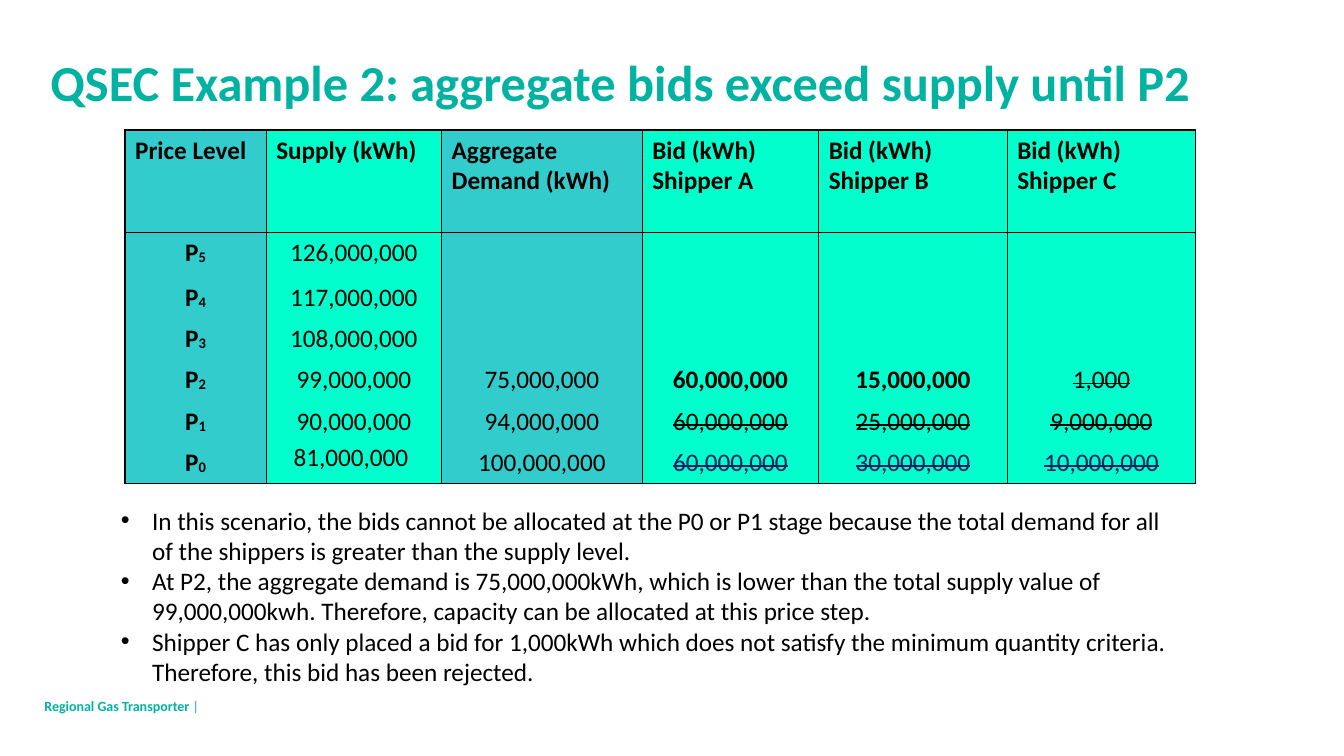
import pptx
import pptx.dml.color
import pptx.enum.text
import pptx.oxml.ns
import pptx.util
from lxml import etree

Inches, Pt = pptx.util.Inches, pptx.util.Pt
ALIGN, ANCHOR = pptx.enum.text.PP_ALIGN, pptx.enum.text.MSO_ANCHOR

TITLE = "QSEC Example 2: aggregate bids exceed supply until P2"
HEADERS = ["Price Level", "Supply (kWh)", "Aggregate Demand (kWh)",
           "Bid (kWh) Shipper A", "Bid (kWh) Shipper B", "Bid (kWh) Shipper C"]
PRICE_ROWS = [
    ["P5", "126,000,000", "", "", "", ""],
    ["P4", "117,000,000", "", "", "", ""],
    ["P3", "108,000,000", "", "", "", ""],
    ["P2", "99,000,000", "75,000,000", "60,000,000", "15,000,000", "1,000"],
    ["P1", "90,000,000", "94,000,000", "60,000,000", "25,000,000", "9,000,000"],
    ["P0", "81,000,000", "100,000,000", "60,000,000", "30,000,000", "10,000,000"],
]
ACCEPTED_BIDS = {(4, 3), (4, 4)}
BULLETS = [
    "In this scenario, the bids cannot be allocated at the P0 or P1 stage because "
    "the total demand for all of the shippers is greater than the supply level.",
    "At P2, the aggregate demand is 75,000,000kWh, which is lower than the total supply "
    "value of 99,000,000kwh. Therefore, capacity can be allocated at this price step.",
    "Shipper C has only placed a bid for 1,000kWh which does not satisfy the minimum "
    "quantity criteria. Therefore, this bid has been rejected.",
]
FOOTER = ["Regional Gas Transporter ", "|"]

COLORS = {"brand": "00B2A1", "text": "000000", "teal": "33CCCC",
          "mint": "00FFCC", "navy": "002060"}
FONT = "Calibri"
COLUMN_WIDTHS = [1.4, 1.74, 1.99, 1.75, 1.87, 1.87]
ROW_HEIGHTS = [1.02, 0.44] + [0.41] * 5
TEAL_COLUMNS = {0, 2}
FIRST_BID_COLUMN = 3


def color(name):
    return pptx.dml.color.RGBColor.from_string(COLORS[name])


def format_font(font, size=18, name="text", bold=False):
    font.name, font.size, font.bold = FONT, Pt(size), bold
    font.color.rgb = color(name)


def set_borders(cell, visible_sides):
    properties = cell._tc.get_or_add_tcPr()
    for side in "LRTB":
        line = etree.SubElement(properties, pptx.oxml.ns.qn(f"a:ln{side}"), w=str(Pt(1)))
        if side in visible_sides:
            fill = etree.SubElement(line, pptx.oxml.ns.qn("a:solidFill"))
            etree.SubElement(fill, pptx.oxml.ns.qn("a:srgbClr"), val=COLORS["text"])
        else:
            etree.SubElement(line, pptx.oxml.ns.qn("a:noFill"))


def fill_cell(cell, row, column, text):
    last_row = len(PRICE_ROWS)
    set_borders(cell, "LR" + "T" * (row <= 1) + "B" * (row in (0, last_row)))
    cell.fill.solid()
    cell.fill.fore_color.rgb = color("teal" if column in TEAL_COLUMNS else "mint")
    if (row, column) == (last_row, 1):
        cell.margin_left = cell.margin_top = cell.margin_bottom = 0
        cell.margin_right = Inches(0.06)
    paragraph = cell.text_frame.paragraphs[0]
    paragraph.alignment = ALIGN.CENTER if row else ALIGN.LEFT
    format_font(paragraph.font)
    is_price = row > 0 and column == 0
    is_bid = row > 0 and column >= FIRST_BID_COLUMN
    accepted = (row, column) in ACCEPTED_BIDS
    for part in (text if is_price else [text] if text else []):
        run = paragraph.add_run()
        run.text = part
        format_font(run.font, name="navy" if is_bid and row == last_row else "text",
                    bold=row == 0 or is_price or accepted)
        if is_price and part.isdigit():
            run.font._element.set("baseline", "-4000")
        if is_bid and not accepted:
            run.font._element.set("strike", "sngStrike")


def add_bid_table(slide):
    rows = [HEADERS] + PRICE_ROWS
    table = slide.shapes.add_table(
        len(rows), len(HEADERS), Inches(1.24), Inches(1.29),
        Inches(sum(COLUMN_WIDTHS)), Inches(sum(ROW_HEIGHTS))).table
    table.first_row = table.horz_banding = False
    for column, width in zip(table.columns, COLUMN_WIDTHS):
        column.width = Inches(width)
    for row, height in zip(table.rows, ROW_HEIGHTS):
        row.height = Inches(height)
    for row, texts in enumerate(rows):
        for column, text in enumerate(texts):
            fill_cell(table.cell(row, column), row, column, text)


def add_bullets(slide):
    frame = slide.shapes.add_textbox(
        Inches(1.1), Inches(4.96), Inches(10.72), Inches(1.92)).text_frame
    frame.word_wrap = True
    frame.text = "\n".join(BULLETS)
    for paragraph in frame.paragraphs:
        properties = paragraph._p.get_or_add_pPr()
        properties.set("marL", str(Inches(0.31)))
        properties.set("indent", str(-Inches(0.31)))
        etree.SubElement(properties, pptx.oxml.ns.qn("a:buFont"), typeface="Arial")
        etree.SubElement(properties, pptx.oxml.ns.qn("a:buChar"), char="•")
        format_font(paragraph.runs[0].font)


def add_footer(slide):
    frame = slide.shapes.add_textbox(
        Inches(0.44), Inches(6.88), Inches(1.75), Inches(0.24)).text_frame
    frame.margin_left = frame.margin_right = frame.margin_top = frame.margin_bottom = 0
    frame.word_wrap = True
    frame.vertical_anchor = ANCHOR.MIDDLE
    for text, bold in zip(FOOTER, (True, False)):
        run = frame.paragraphs[0].add_run()
        run.text = text
        format_font(run.font, 10, "brand", bold)


def main():
    presentation = pptx.Presentation()
    presentation.slide_width, presentation.slide_height = Inches(13.33), Inches(7.5)
    slide = presentation.slides.add_slide(presentation.slide_layouts[5])
    title = slide.shapes.title
    title.left, title.top = Inches(0.4), Inches(0.4)
    title.width, title.height = Inches(12.41), Inches(0.82)
    title.text_frame.text = TITLE
    title.text_frame.vertical_anchor = ANCHOR.MIDDLE
    paragraph = title.text_frame.paragraphs[0]
    paragraph.alignment = ALIGN.LEFT
    format_font(paragraph.runs[0].font, 36, "brand", True)
    add_bid_table(slide)
    add_bullets(slide)
    add_footer(slide)
    presentation.save("out.pptx")


if __name__ == "__main__":
    main()
